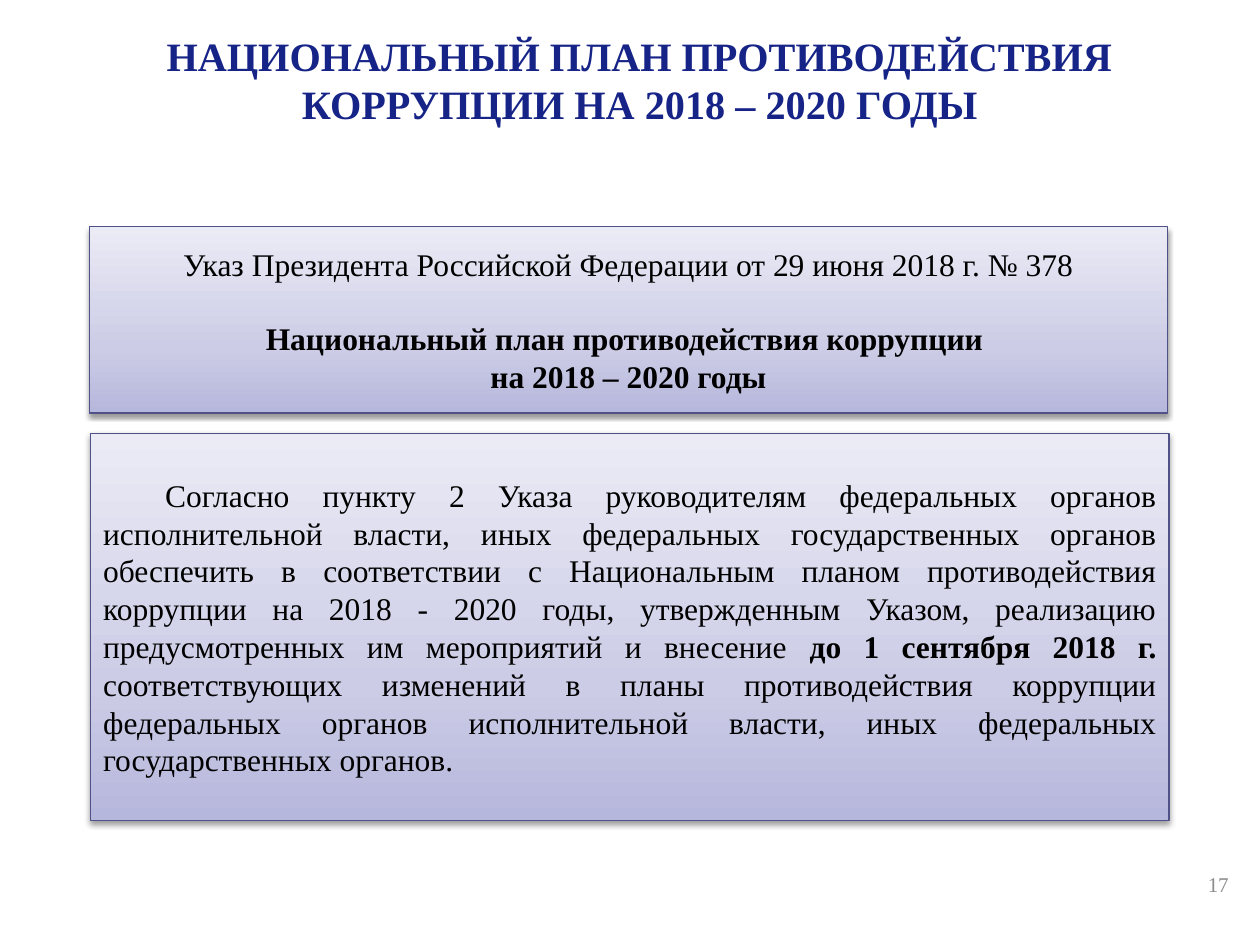
from dataclasses import dataclass

from pptx import Presentation
from pptx import util as u
from pptx.dml.color import RGBColor
from pptx.enum import shapes, text
from pptx.oxml import parse_xml
from pptx.oxml.ns import nsdecls, qn


@dataclass(frozen=True)
class Theme:
    font: str = "Times New Roman"
    title: str = "162387"
    body: str = "000000"
    number: str = "8C8C8C"
    border: str = "505188"
    panel_stops: tuple = ((0, "B6B7DC"), (35, "CCCCE6"), (100, "EBEBF6"))
    title_size: int = 23
    body_size: int = 18
    number_size: int = 12


THEME = Theme()
ALIGN = text.PP_ALIGN
MIDDLE = text.MSO_ANCHOR.MIDDLE


def set_all(target, values):
    for name, value in values.items():
        setattr(target, name, value)


def add_paragraph(paragraph, runs, size, color, **layout):
    """Write (text, bold) runs; a newline in the text is a line break."""
    set_all(paragraph, layout)
    for words, bold in runs:
        for index, line in enumerate(words.split("\n")):
            if index:
                paragraph.add_line_break()
            run = paragraph.add_run()
            run.text = line
            set_all(run.font, {"name": THEME.font, "size": u.Pt(size), "bold": bold})
            run.font.color.rgb = RGBColor.from_string(color)


def add_label(slide, box, words, size, color, bold, align, anchor):
    frame = slide.shapes.add_textbox(*map(u.Cm, box)).text_frame
    set_all(frame, {"word_wrap": True, "vertical_anchor": anchor})
    add_paragraph(frame.paragraphs[0], [(words, bold)], size, color, alignment=align)


def style_panel(panel):
    # Three-stop gradient, running upwards
    panel.fill.gradient()
    properties = panel.element.spPr
    stops = "".join(
        f'<a:gs pos="{place * 1000}"><a:srgbClr val="{color}"/></a:gs>'
        for place, color in THEME.panel_stops
    )
    properties.replace(properties.find(qn("a:gradFill")), parse_xml(
        f'<a:gradFill {nsdecls("a")} rotWithShape="1"><a:gsLst>{stops}</a:gsLst>'
        '<a:lin ang="16200000" scaled="0"/></a:gradFill>'))
    # Border
    panel.line.color.rgb = RGBColor.from_string(THEME.border)
    panel.line.width = u.Pt(0.75)
    # Soft shadow below
    panel.shadow.inherit = False
    properties.find(qn("a:effectLst")).append(parse_xml(
        f'<a:outerShdw {nsdecls("a")} blurRad="{u.Pt(3.1)}" dist="{u.Pt(1.6)}" '
        'dir="5400000" rotWithShape="0"><a:srgbClr val="000000">'
        '<a:alpha val="38000"/></a:srgbClr></a:outerShdw>'))


def add_panel(slide, box, paragraphs):
    panel = slide.shapes.add_shape(shapes.MSO_SHAPE.RECTANGLE, *map(u.Cm, box))
    style_panel(panel)
    frame = panel.text_frame
    set_all(frame, {"word_wrap": True, "vertical_anchor": MIDDLE})
    for index, (runs, layout) in enumerate(paragraphs):
        paragraph = frame.add_paragraph() if index else frame.paragraphs[0]
        add_paragraph(paragraph, runs, THEME.body_size, THEME.body, **layout)
    return frame


def main():
    deck = Presentation()
    set_all(deck, {"slide_width": u.Cm(25.4), "slide_height": u.Cm(19.05)})
    slide = deck.slides.add_slide(deck.slide_layouts[6])

    # Page number
    add_label(slide, (19.1, 17.32, 5.92, 1.02), "17", THEME.number_size,
              THEME.number, False, ALIGN.RIGHT, MIDDLE)

    # Instruction to the heads of federal bodies
    instruction = [
        ("Согласно пункту 2 Указа руководителям федеральных органов исполнительной "
         "власти, иных федеральных государственных органов обеспечить в соответствии "
         "с Национальным планом противодействия коррупции на 2018 - 2020 годы, "
         "утвержденным Указом, реализацию предусмотренных им мероприятий и внесение ",
         False),
        ("до 1 сентября 2018 г.", True),
        (" соответствующих изменений в планы противодействия коррупции федеральных "
         "органов исполнительной власти, иных федеральных государственных органов.",
         False),
    ]
    frame = add_panel(slide, (1.83, 8.74, 21.74, 7.8),
                      [(instruction, {"alignment": ALIGN.JUSTIFY})])
    frame.paragraphs[0]._p.get_or_add_pPr().set("indent", str(u.Cm(1.25)))

    # Title
    add_label(slide, (1.5, 0.51, 22.81, 3.25),
              "НАЦИОНАЛЬНЫЙ ПЛАН ПРОТИВОДЕЙСТВИЯ КОРРУПЦИИ НА 2018 – 2020 ГОДЫ",
              THEME.title_size, THEME.title, True, ALIGN.CENTER, text.MSO_ANCHOR.TOP)

    # Decree and the plan it approves
    add_panel(slide, (1.8, 4.57, 21.74, 3.76), [
        ([("Указ Президента Российской Федерации от 29 июня 2018 г. № 378", False)],
         {"alignment": ALIGN.CENTER}),
        ([("Национальный план противодействия коррупции \nна 2018 – 2020 годы", True)],
         {"alignment": ALIGN.CENTER, "space_before": u.Pt(21)}),
    ])

    deck.save("out.pptx")


if __name__ == "__main__":
    main()
